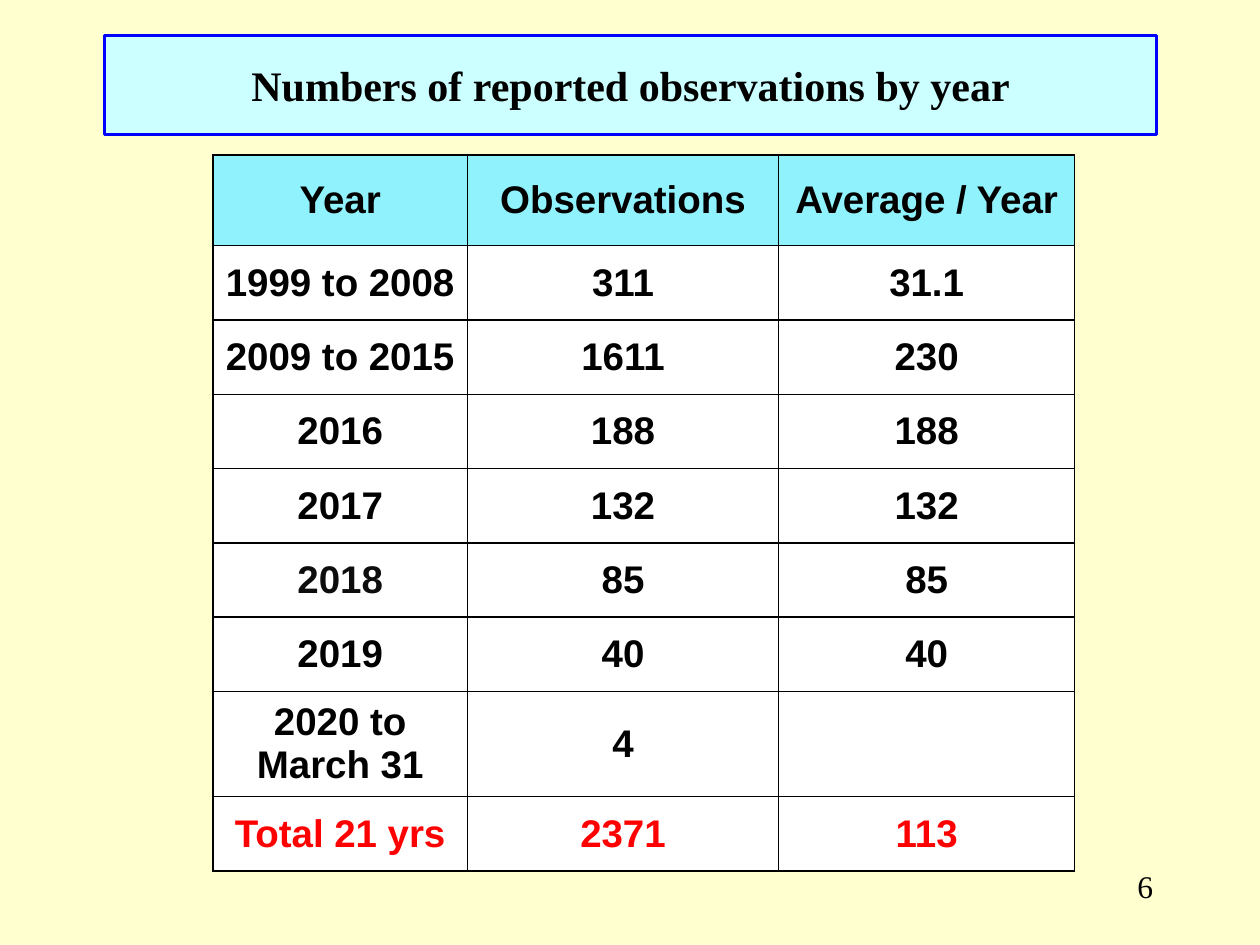
from dataclasses import dataclass

from lxml import etree
from pptx import Presentation
from pptx import util as u
from pptx.dml.color import RGBColor
from pptx.enum import shapes, text
from pptx.oxml import ns
from pptx.slide import Slide

CREAM = RGBColor(0xFF, 0xFF, 0xD0)
PALE_CYAN = RGBColor(0xCC, 0xFF, 0xFF)
HEADER_CYAN = RGBColor(0x90, 0xF2, 0xFC)
WHITE = RGBColor(0xFF, 0xFF, 0xFF)
BLACK = RGBColor(0x00, 0x00, 0x00)
NEAR_BLACK = RGBColor(0x0D, 0x0D, 0x0D)
BLUE = RGBColor(0x00, 0x00, 0xFF)
RED = RGBColor(0xFF, 0x00, 0x00)

OBSERVATIONS = [
    ("Year", "Observations", "Average / Year"),
    ("1999 to 2008", "311", "31.1"),
    ("2009 to 2015", "1611", "230"),
    ("2016", "188", "188"),
    ("2017", "132", "132"),
    ("2018", "85", "85"),
    ("2019", "40", "40"),
    ("2020 to\nMarch 31", "4", ""),
    ("Total 21 yrs", "2371", "113"),
]


@dataclass
class ReportSlide:
    """Draws the elements of the observation report on one slide."""

    slide: Slide
    serif: str = "Times New Roman"
    sans: str = "Arial"

    def set_words(self, frame, words, font, size, align, color=BLACK, bold=True):
        frame.text = words
        for paragraph in frame.paragraphs:
            paragraph.alignment = align
            paragraph.font.name = font
            paragraph.font.size = u.Pt(size)
            paragraph.font.bold = bold
            paragraph.font.color.rgb = color

    def background(self, color):
        self.slide.background.fill.solid()
        self.slide.background.fill.fore_color.rgb = color

    def title(self, words, box):
        banner = self.slide.shapes.add_shape(
            shapes.MSO_SHAPE.RECTANGLE, *map(u.Inches, box))
        banner.shadow.inherit = False
        banner.fill.solid()
        banner.fill.fore_color.rgb = PALE_CYAN
        banner.line.color.rgb = BLUE
        banner.line.width = u.Pt(1.5)
        banner.text_frame.vertical_anchor = text.MSO_ANCHOR.MIDDLE
        self.set_words(banner.text_frame, words, self.serif, 24, text.PP_ALIGN.CENTER)

    def page_number(self, words, box):
        number = self.slide.shapes.add_textbox(*map(u.Inches, box))
        number.text_frame.word_wrap = True
        self.set_words(number.text_frame, words, self.serif, 18,
                       text.PP_ALIGN.RIGHT, bold=False)

    def borders(self, cell):
        properties = cell._tc.get_or_add_tcPr()
        for position, side in enumerate("LRTB"):
            edge = etree.Element(ns.qn(f"a:ln{side}"), w=str(u.Pt(1)))
            fill = etree.SubElement(edge, ns.qn("a:solidFill"))
            etree.SubElement(fill, ns.qn("a:srgbClr"), val=str(BLACK))
            properties.insert(position, edge)

    def table(self, rows, left, top, widths, heights):
        lengths = (left, top, sum(widths), sum(heights))
        grid = self.slide.shapes.add_table(
            len(rows), len(widths), *map(u.Inches, lengths)).table
        for column, width in zip(grid.columns, widths):
            column.width = u.Inches(width)
        for r, (entries, height) in enumerate(zip(rows, heights)):
            grid.rows[r].height = u.Inches(height)
            for c, entry in enumerate(entries):
                cell = grid.cell(r, c)
                cell.margin_left = cell.margin_right = u.Inches(0.05)
                cell.vertical_anchor = text.MSO_ANCHOR.MIDDLE
                cell.fill.solid()
                cell.fill.fore_color.rgb = WHITE if r else HEADER_CYAN
                color = RED if r == len(rows) - 1 else BLACK
                if entry == "2018":
                    color = NEAR_BLACK
                self.set_words(cell.text_frame, entry, self.sans, 22,
                               text.PP_ALIGN.CENTER, color)
                self.borders(cell)


def main():
    deck = Presentation()
    deck.slide_width, deck.slide_height = u.Inches(10), u.Inches(7.5)
    report = ReportSlide(deck.slides.add_slide(deck.slide_layouts[6]))
    report.background(CREAM)
    report.page_number("6", (7.17, 6.83, 2.08, 0.5))
    report.title("Numbers of reported observations by year", (0.83, 0.28, 8.35, 0.79))
    heights = [0.72] + [0.59] * 6 + [0.79, 0.59]
    report.table(OBSERVATIONS, 1.69, 1.23, (2.02, 2.47, 2.35), heights)
    deck.save("out.pptx")


if __name__ == "__main__":
    main()
